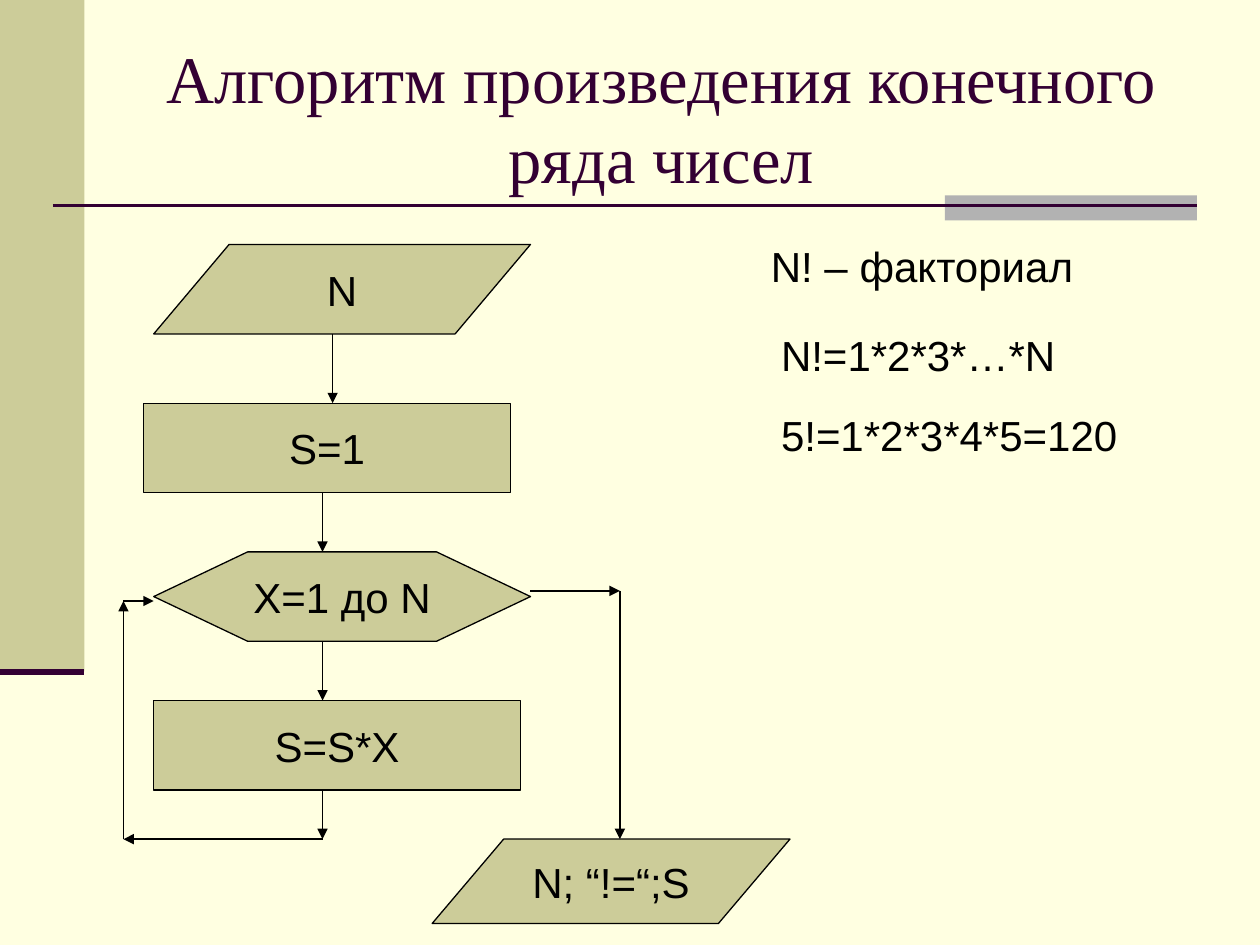
import itertools

import pptx
import pptx.dml.color
import pptx.enum.shapes
import pptx.enum.text
import pptx.oxml
import pptx.oxml.ns
import pptx.util
from pptx.util import Inches

RGBColor = pptx.dml.color.RGBColor
CREAM = RGBColor(0xFF, 0xFF, 0xE1)
OLIVE = RGBColor(0xCC, 0xCC, 0x99)
GRAY = RGBColor(0xB2, 0xB2, 0xB2)
PLUM = RGBColor(0x33, 0x00, 0x33)
BLACK = RGBColor(0, 0, 0)

SHAPE = pptx.enum.shapes.MSO_SHAPE
ALIGN = pptx.enum.text.PP_ALIGN
ANCHOR = pptx.enum.text.MSO_ANCHOR
AUTO_SIZE = pptx.enum.text.MSO_AUTO_SIZE


class FlowchartSlide:
    body_font, body_size = "Arial", 24
    title_font, title_size = "Times New Roman", 38
    line_width = 0.75

    def __init__(self, presentation):
        self.slide = presentation.slides.add_slide(presentation.slide_layouts[5])
        self.slide.background.fill.solid()
        self.slide.background.fill.fore_color.rgb = CREAM

    def label(self, frame, text, font, size, color, align):
        frame.text = text
        for paragraph in frame.paragraphs:
            paragraph.alignment = align
            for run in paragraph.runs:
                run.font.name = font
                run.font.size = pptx.util.Pt(size)
                run.font.color.rgb = color

    def title(self, text, left, top, width, height):
        heading = self.slide.shapes.title
        heading.left, heading.top = Inches(left), Inches(top)
        heading.width, heading.height = Inches(width), Inches(height)
        frame = heading.text_frame
        frame.auto_size = AUTO_SIZE.NONE
        frame.vertical_anchor = ANCHOR.MIDDLE
        self.label(frame, text, self.title_font, self.title_size, PLUM, ALIGN.CENTER)

    def note(self, text, left, top, width, height=0.5):
        box = self.slide.shapes.add_textbox(
            Inches(left), Inches(top), Inches(width), Inches(height))
        box.text_frame.word_wrap = True
        box.text_frame.auto_size = AUTO_SIZE.SHAPE_TO_FIT_TEXT
        self.label(box.text_frame, text, self.body_font, self.body_size, BLACK, ALIGN.LEFT)

    def band(self, left, top, width, height, color, kind=SHAPE.RECTANGLE):
        area = self.slide.shapes.add_shape(
            kind, Inches(left), Inches(top), Inches(width), Inches(height))
        area.shadow.inherit = False
        area.fill.solid()
        area.fill.fore_color.rgb = color
        area.line.fill.background()
        return area

    def step(self, text, kind, left, top, width, height=0.71):
        block = self.band(left, top, width, height, OLIVE, kind)
        block.line.color.rgb = BLACK
        block.line.width = pptx.util.Pt(self.line_width)
        block.text_frame.word_wrap = False
        block.text_frame.vertical_anchor = ANCHOR.MIDDLE
        self.label(block.text_frame, text, self.body_font, self.body_size, BLACK, ALIGN.CENTER)
        return block

    def rule(self, start, end, color, width):
        connector = self.slide.shapes.add_connector(
            pptx.enum.shapes.MSO_CONNECTOR.STRAIGHT,
            *(Inches(value) for value in (*start, *end)))
        connector.line.color.rgb = color
        connector.line.width = pptx.util.Pt(width)
        connector._element.spPr.append(pptx.oxml.parse_xml(
            f'<a:effectLst {pptx.oxml.ns.nsdecls("a")}/>'))
        return connector

    def arrow(self, start, end):
        connector = self.rule(start, end, BLACK, self.line_width)
        outline = connector._element.spPr.find(pptx.oxml.ns.qn("a:ln"))
        outline.append(pptx.oxml.parse_xml(
            f'<a:tailEnd {pptx.oxml.ns.nsdecls("a")} type="triangle"/>'))

    def route(self, *points):
        for start, end in itertools.pairwise(points):
            self.arrow(start, end)


def main():
    presentation = pptx.Presentation()
    presentation.slide_width = Inches(10)
    presentation.slide_height = Inches(7.5)
    page = FlowchartSlide(presentation)

    page.band(0, 0, 0.67, 5.33, OLIVE)
    page.band(7.5, 1.55, 2, 0.2, GRAY)
    page.rule((0.42, 1.63), (9.5, 1.63), PLUM, 1.5)
    page.rule((0, 5.33), (0.67, 5.33), PLUM, 3.5)

    page.title("Алгоритм произведения конечного ряда чисел", 1, 0.3, 8.5, 1.25)
    page.note("N! – факториал", 6.02, 1.86, 3.47)
    page.note("N!=1*2*3*…*N", 6.1, 2.57, 2.91)
    page.note("5!=1*2*3*4*5=120", 6.1, 3.2, 2.91)

    page.step("N", SHAPE.FLOWCHART_DATA, 1.22, 1.94, 2.99)
    page.step("S=1", SHAPE.RECTANGLE, 1.14, 3.2, 2.91)
    loop = page.step("X=1 до N", SHAPE.HEXAGON, 1.22, 4.38, 2.99)
    loop.adjustments[0] = 1.05
    page.step("S=S*X", SHAPE.RECTANGLE, 1.22, 5.56, 2.91)
    page.step("N; “!=“;S", SHAPE.FLOWCHART_DATA, 3.43, 6.66, 2.84, 0.67)

    axis, loop_left, exit_right, bottom = 2.56, 0.98, 4.92, 6.66
    page.route((2.64, 2.65), (2.64, 3.2))
    page.route((axis, 3.91), (axis, 4.38))
    page.route((axis, 5.09), (axis, 5.56))
    page.route((axis, 6.27), (axis, bottom), (loop_left, bottom),
               (loop_left, 4.77), (1.22, 4.77))
    page.route((4.21, 4.69), (exit_right, 4.69), (exit_right, bottom))

    presentation.save("out.pptx")


if __name__ == "__main__":
    main()
